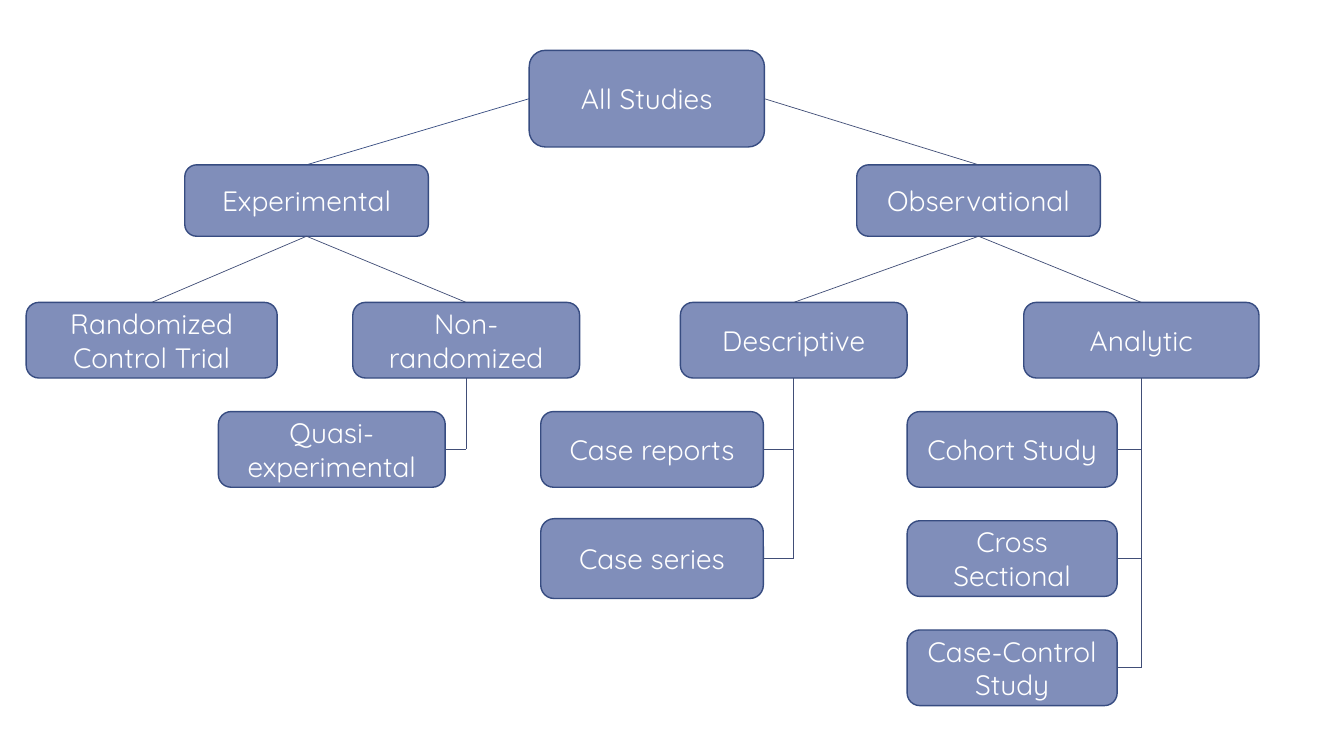
"""Build a slide with a tree of study designs."""
from lxml import etree
from pptx import Presentation
from pptx.dml.color import RGBColor
from pptx.enum.shapes import MSO_CONNECTOR, MSO_SHAPE
from pptx.enum.text import MSO_ANCHOR, PP_ALIGN
from pptx.oxml.ns import qn
from pptx.util import Pt

ROUNDED = MSO_SHAPE.ROUNDED_RECTANGLE
STRAIGHT = MSO_CONNECTOR.STRAIGHT
MIDDLE = MSO_ANCHOR.MIDDLE
CENTER = PP_ALIGN.CENTER

EMU_PER_PX = 9525
TOP, LEFT, BOTTOM, RIGHT = range(4)
BOX_FILL, BOX_LINE, BRANCH_LINE = "808EBA", "374C81", "414E77"

STUDIES = {
    "All Studies": (504, 48, 224, 92),
    "Experimental": (176, 157, 232, 68),
    "Observational": (816, 157, 232, 68),
    "Randomized Control Trial": (25, 288, 239, 72),
    "Non-randomized": (336, 288, 216, 72),
    "Descriptive": (648, 288, 216, 72),
    "Analytic": (975, 288, 224, 72),
    "Quasi-experimental": (208, 392, 216, 72),
    "Case reports": (515, 392, 212, 72),
    "Case series": (515, 494, 212, 76),
    "Cohort Study": (864, 392, 200, 72),
    "Cross Sectional": (864, 496, 200, 72),
    "Case-Control Study": (864, 600, 200, 72),
}
BRANCHES = [
    ("All Studies", LEFT, "Experimental", BOX_LINE),
    ("All Studies", RIGHT, "Observational", BRANCH_LINE),
    ("Experimental", BOTTOM, "Randomized Control Trial", BRANCH_LINE),
    ("Experimental", BOTTOM, "Non-randomized", BRANCH_LINE),
    ("Observational", BOTTOM, "Descriptive", BRANCH_LINE),
    ("Observational", BOTTOM, "Analytic", BRANCH_LINE),
]
RAILS = {
    "Non-randomized": ["Quasi-experimental"],
    "Descriptive": ["Case reports", "Case series"],
    "Analytic": ["Cohort Study", "Cross Sectional", "Case-Control Study"],
}


def px(length):
    """Turn pixels into EMU."""
    return length * EMU_PER_PX


def color(value):
    """Turn a hex string into a colour."""
    return RGBColor.from_string(value)


def add_study(slide, text, bounds):
    """Add a rounded box with a centred label."""
    shape = slide.shapes.add_shape(ROUNDED, *map(px, bounds))
    shape.shadow.inherit = False
    shape.fill.solid()
    shape.fill.fore_color.rgb = color(BOX_FILL)
    shape.line.color.rgb = color(BOX_LINE)
    shape.line.width = Pt(1)
    shape.text_frame.vertical_anchor = MIDDLE
    paragraph = shape.text_frame.paragraphs[0]
    paragraph.text = text
    paragraph.alignment = CENTER
    paragraph.font.name = "Quicksand"
    paragraph.font.size = Pt(20)
    paragraph.font.color.rgb = color("FFFFFF")
    return shape


def add_line(slide, start, side, end_x=0, end_y=0, line_color=BRANCH_LINE):
    """Add a thin line from the side of a box to a point in EMU."""
    connector = slide.shapes.add_connector(STRAIGHT, 0, 0, end_x, end_y)
    connector.begin_connect(start, side)
    connector.line.color.rgb = color(line_color)
    connector.line.width = Pt(0.5)
    etree.SubElement(connector._element.spPr, qn("a:effectLst"))
    return connector


def add_rail(slide, parent, children):
    """Hang children off a vertical line below their parent."""
    rail_x = parent.left + parent.width // 2
    middles = [child.top + child.height // 2 for child in children]
    add_line(slide, parent, BOTTOM, rail_x, middles[-1])
    for child, middle in zip(children, middles):
        add_line(slide, child, RIGHT, rail_x, middle)


def main():
    """Build and save the slide."""
    presentation = Presentation()
    presentation.slide_width, presentation.slide_height = px(1280), px(720)
    slide = presentation.slides.add_slide(presentation.slide_layouts[6])
    boxes = {text: add_study(slide, text, bounds) for text, bounds in STUDIES.items()}
    for parent, side, child, line_color in BRANCHES:
        branch = add_line(slide, boxes[parent], side, line_color=line_color)
        branch.end_connect(boxes[child], TOP)
    for parent, children in RAILS.items():
        add_rail(slide, boxes[parent], [boxes[child] for child in children])
    presentation.save("out.pptx")


if __name__ == "__main__":
    main()
